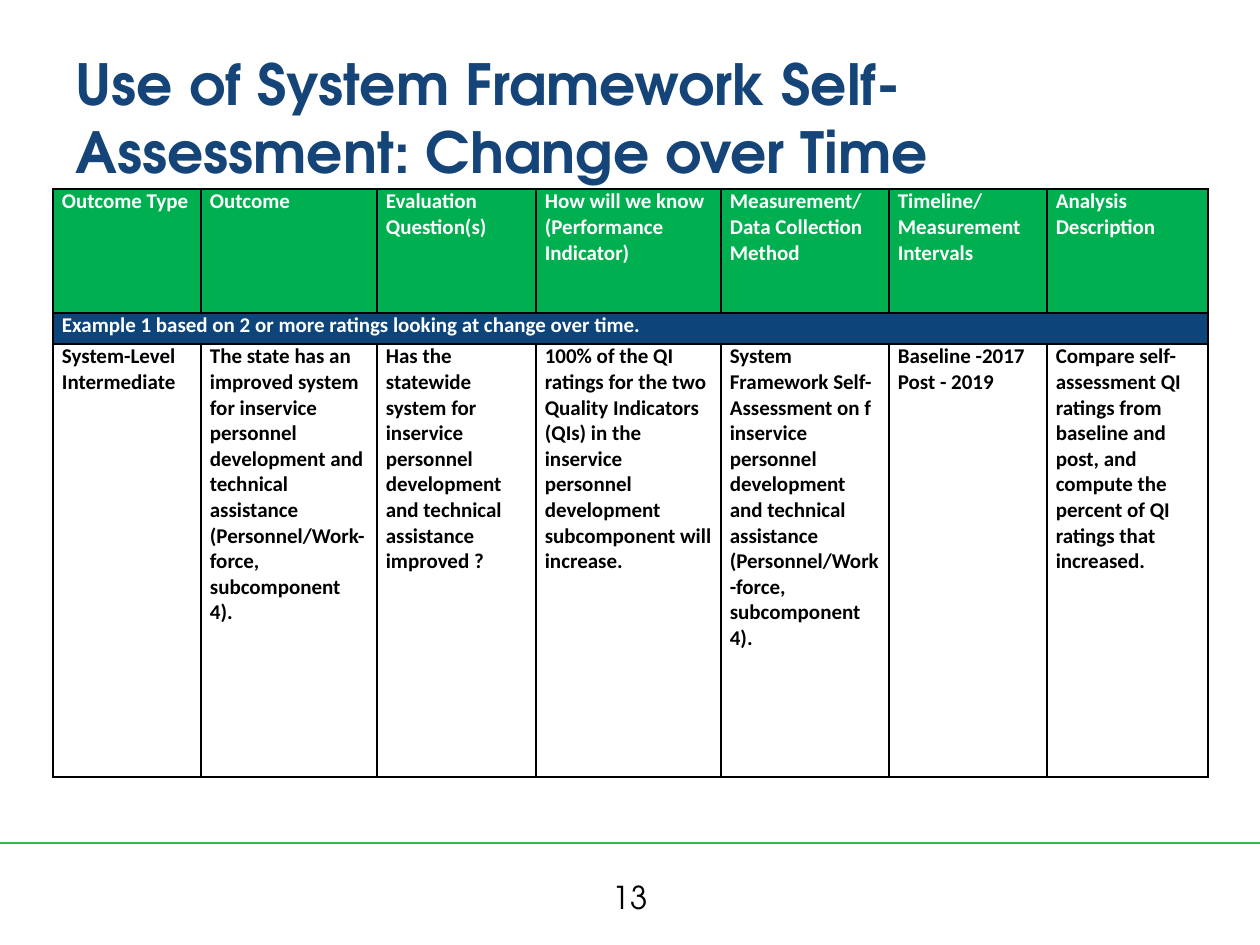
from lxml import etree
from pptx import Presentation
from pptx.dml.color import RGBColor
from pptx.enum import shapes, text
from pptx.oxml import ns
from pptx import util as u

PX = 914400 / 126
WHITE = RGBColor(0xFF, 0xFF, 0xFF)
BLACK = RGBColor(0x00, 0x00, 0x00)
TITLE_BLUE = RGBColor(0x15, 0x45, 0x78)
BAND_BLUE = RGBColor(0x0D, 0x44, 0x79)
HEADER_GREEN = RGBColor(0x00, 0xB0, 0x50)
RULE_GREEN = RGBColor(0x39, 0xB5, 0x4A)

COLUMN_WIDTHS = [148, 176, 159, 185, 168, 158, 161]
ROW_HEIGHTS = [124, 31, 433]
HEADERS = [
    "Outcome Type",
    "Outcome",
    "Evaluation Question(s)",
    "How will we know\n(Performance Indicator)",
    "Measurement/\nData Collection Method",
    "Timeline/\nMeasurement Intervals",
    "Analysis Description",
]
EXAMPLE = "Example 1 based on 2 or more ratings looking at change over time."
DETAILS = [
    "System-Level\nIntermediate",
    "The state has an improved system for inservice personnel development and "
    "technical assistance (Personnel/Work-force, subcomponent 4).",
    "Has the statewide system for inservice personnel development and technical "
    "assistance improved ?",
    "100% of the QI ratings for the two Quality Indicators (QIs) in the inservice "
    "personnel development subcomponent will increase.",
    "System Framework Self-Assessment on f inservice personnel development and "
    "technical assistance (Personnel/Work-force, subcomponent 4).",
    "Baseline -2017\nPost - 2019",
    "Compare self-assessment QI ratings from baseline and post, and compute the "
    "percent of QI ratings that increased.",
]


def px(length):
    return u.Emu(round(length * PX))


class SlideBuilder:
    heading_font = "TeX Gyre Adventor"
    table_font = "Calibri"

    def __init__(self, deck):
        self.page = deck.slides.add_slide(deck.slide_layouts[5])

    def set_text(self, frame, words, font, size, color, bold=False,
                 align=text.PP_ALIGN.LEFT):
        frame.text = words
        frame.word_wrap = True
        for para in frame.paragraphs:
            para.alignment = align
            para.font.name = font
            para.font.size = u.Pt(size)
            para.font.bold = bold
            para.font.color.rgb = color

    def title(self, words, left, top, width, height):
        box = self.page.shapes.title
        box.left, box.top, box.width, box.height = map(px, (left, top, width, height))
        frame = box.text_frame
        self.set_text(frame, words, self.heading_font, 32.4, TITLE_BLUE, bold=True)
        frame.auto_size = text.MSO_AUTO_SIZE.NONE
        frame.vertical_anchor = text.MSO_ANCHOR.MIDDLE

    def label(self, words, left, top, width, height):
        box = self.page.shapes.add_textbox(*map(px, (left, top, width, height)))
        self.set_text(box.text_frame, words, self.heading_font, 18, BLACK,
                      align=text.PP_ALIGN.CENTER)

    def rule(self, left, right, y):
        line = self.page.shapes.add_connector(
            shapes.MSO_CONNECTOR.STRAIGHT, px(left), px(y), px(right), px(y))
        line.line.color.rgb = RULE_GREEN
        line.line.width = u.Pt(1.5)
        etree.SubElement(line._element.spPr, ns.qn("a:effectLst"))

    def table(self, left, top, widths, heights):
        frame = self.page.shapes.add_table(
            len(heights), len(widths), px(left), px(top),
            px(sum(widths)), px(sum(heights)))
        grid = frame.table
        grid.first_row = grid.horz_banding = False
        for column, width in zip(grid.columns, widths):
            column.width = px(width)
        for row, height in zip(grid.rows, heights):
            row.height = px(height)
        return grid

    def cell(self, cell, words, color, fill=None):
        cell.margin_left = cell.margin_right = px(9)
        cell.margin_top = cell.margin_bottom = 0
        self.set_text(cell.text_frame, words, self.table_font, 12, color, bold=True)
        if fill is None:
            cell.fill.background()
        else:
            cell.fill.solid()
            cell.fill.fore_color.rgb = fill
        self.borders(cell)

    def borders(self, cell):
        properties = cell._tc.get_or_add_tcPr()
        for index, side in enumerate("LRTB"):
            border = etree.Element(ns.qn(f"a:ln{side}"), w=str(u.Pt(1)))
            solid = etree.SubElement(border, ns.qn("a:solidFill"))
            etree.SubElement(solid, ns.qn("a:srgbClr"), val=str(BLACK))
            properties.insert(index, border)


def main():
    deck = Presentation()
    deck.slide_width, deck.slide_height = px(1260), px(945)
    slide = SlideBuilder(deck)
    slide.rule(0, 1260, 843)
    slide.title("Use of System Framework Self-Assessment: Change over Time",
                63, 38, 1134, 157)
    slide.label("13", 483, 872, 294, 50)

    grid = slide.table(53, 189, COLUMN_WIDTHS, ROW_HEIGHTS)
    grid.cell(1, 0).merge(grid.cell(1, len(COLUMN_WIDTHS) - 1))
    for column, (header, detail) in enumerate(zip(HEADERS, DETAILS)):
        slide.cell(grid.cell(0, column), header, WHITE, HEADER_GREEN)
        slide.cell(grid.cell(1, column), "" if column else EXAMPLE, WHITE, BAND_BLUE)
        slide.cell(grid.cell(2, column), detail, BLACK)
    deck.save("out.pptx")


if __name__ == "__main__":
    main()
